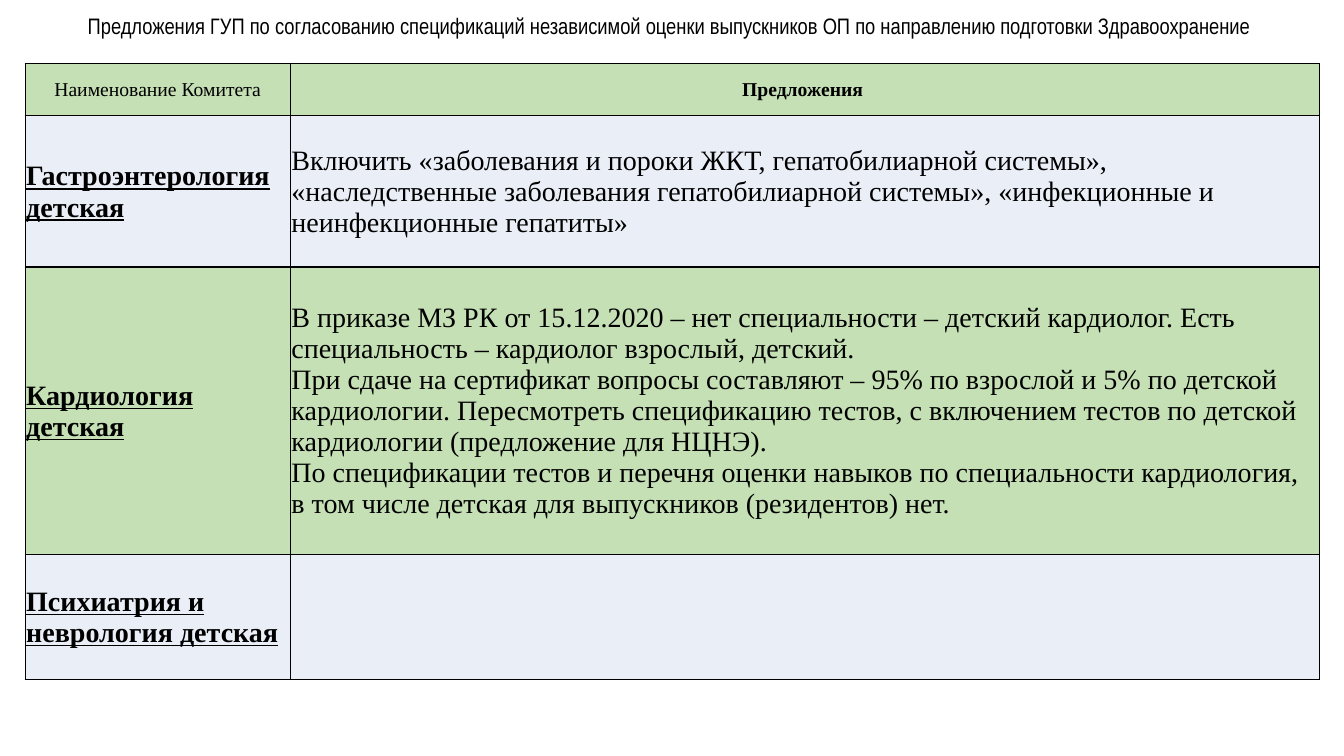
from lxml import etree
from pptx import Presentation
from pptx.dml.color import RGBColor
from pptx.enum.text import MSO_ANCHOR as ANCHOR, PP_ALIGN as ALIGN
from pptx.oxml.ns import qn
from pptx.util import Inches, Pt

W, H = 13.33, 7.5
BLACK, GREEN, PALE = "000000", "C5E0B4", "EAEFF7"
TITLE = ("Предложения ГУП по согласованию спецификаций независимой оценки "
         "выпускников ОП по направлению подготовки Здравоохранение ")
HEADER = ("Наименование Комитета", "Предложения ")
PROPOSALS = [
    ("Гастроэнтерология детская", [
        "Включить «заболевания и пороки ЖКТ, гепатобилиарной системы», "
        "«наследственные заболевания гепатобилиарной системы», "
        "«инфекционные и неинфекционные гепатиты»"]),
    ("Кардиология детская", [
        "В приказе МЗ РК от 15.12.2020 – нет специальности – детский "
        "кардиолог. Есть специальность – кардиолог взрослый, детский.",
        "При сдаче на сертификат вопросы составляют – 95% по взрослой и 5% "
        "по детской кардиологии. Пересмотреть спецификацию тестов, с "
        "включением тестов по детской кардиологии (предложение для НЦНЭ).",
        "По спецификации тестов и перечня оценки навыков по специальности "
        "кардиология, в том числе детская для выпускников (резидентов) нет."]),
    ("Психиатрия и неврология детская", []),
]
COLUMNS = (2.63, 10.21)
ROWS = (0.52, 1.5, 2.85, 1.24)


def rgb(color):
    return RGBColor.from_string(color)


def add_run(p, text, size, font="Times New Roman", bold=False, underline=False):
    r = p.add_run()
    r.text = text
    r.font.size, r.font.name = Pt(size), font
    r.font.bold, r.font.underline = bold, underline
    r.font.color.rgb = rgb(BLACK)


def add_borders(cell, color=BLACK, width=1):
    tc_pr = cell._tc.get_or_add_tcPr()
    for i, side in enumerate(("lnL", "lnR", "lnT", "lnB")):
        ln = etree.Element(qn(f"a:{side}"), w=str(Pt(width)))
        fill = etree.SubElement(ln, qn("a:solidFill"))
        etree.SubElement(fill, qn("a:srgbClr"), val=color)
        tc_pr.insert(i, ln)


def fill_cell(cell, paragraphs, color, size, align=ALIGN.LEFT, **style):
    cell.fill.solid()
    cell.fill.fore_color.rgb = rgb(color)
    add_borders(cell)
    cell.vertical_anchor = ANCHOR.MIDDLE
    cell.margin_left = cell.margin_right = cell.margin_top = Inches(0.01)
    cell.margin_bottom = 0
    tf = cell.text_frame
    for i, text in enumerate(paragraphs):
        p = tf.add_paragraph() if i else tf.paragraphs[0]
        p.alignment = align
        add_run(p, text, size, **style)


def add_title(s, x, y, w, h):
    tf = s.shapes.add_textbox(*map(Inches, (x, y, w, h))).text_frame
    tf.word_wrap = True
    tf.vertical_anchor = ANCHOR.MIDDLE
    p = tf.paragraphs[0]
    p.alignment, p.line_spacing = ALIGN.CENTER, 0.9
    add_run(p, TITLE, 16, "Arial Narrow")


def add_proposals(s, x, y):
    box = map(Inches, (x, y, sum(COLUMNS), sum(ROWS)))
    table = s.shapes.add_table(len(ROWS), len(COLUMNS), *box).table
    for column, width in zip(table.columns, COLUMNS):
        column.width = Inches(width)
    for row, height in zip(table.rows, ROWS):
        row.height = Inches(height)
    for c, text in enumerate(HEADER):
        fill_cell(table.cell(0, c), [text], GREEN, 14, ALIGN.CENTER, bold=c == 1)
    for i, (committee, proposal) in enumerate(PROPOSALS, 1):
        color = PALE if i % 2 else GREEN
        fill_cell(table.cell(i, 0), [committee], color, 20, bold=True, underline=True)
        fill_cell(table.cell(i, 1), proposal, color, 20)


def main():
    prs = Presentation()
    prs.slide_width, prs.slide_height = Inches(W), Inches(H)
    s = prs.slides.add_slide(prs.slide_layouts[6])
    add_proposals(s, 0.25, 0.63)
    add_title(s, 0, 0, W, 0.54)
    prs.save("out.pptx")


if __name__ == "__main__":
    main()
